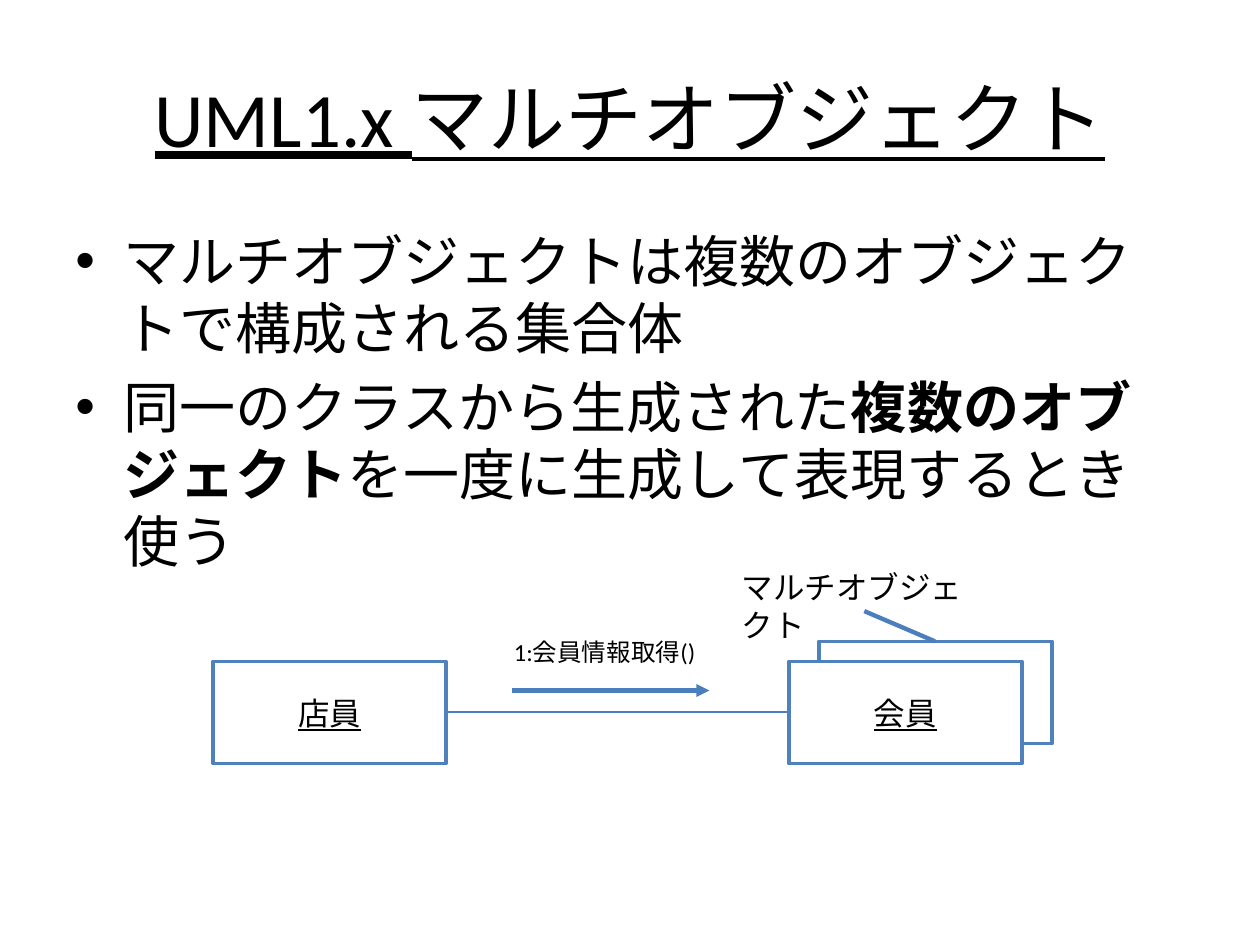
from dataclasses import dataclass

from lxml import etree
from pptx import Presentation
from pptx.dml.color import RGBColor as RGB
from pptx.enum.lang import MSO_LANGUAGE_ID as LANG
from pptx.enum.shapes import MSO_CONNECTOR as CONN, MSO_SHAPE as SHAPE
from pptx.enum.text import MSO_ANCHOR as ANCHOR, PP_ALIGN as ALIGN
from pptx.oxml.ns import qn
from pptx.util import Inches, Pt


@dataclass(frozen=True)
class Theme:
    font: str = "Calibri"
    ink: RGB = RGB(0, 0, 0)
    paper: RGB = RGB(255, 255, 255)
    edge: RGB = RGB(0x4F, 0x81, 0xBD)
    link: RGB = RGB(0x4B, 0x7E, 0xBC)
    title: int = 44
    body: int = 32
    label: int = 18
    note: int = 14


def put(item, **values):
    for name, value in values.items():
        setattr(item, name, value)


class Painter:
    def __init__(self, slide, theme):
        self.shapes = slide.shapes
        self.theme = theme

    def add_run(self, para, text, size, **form):
        run = para.add_run()
        run.text = text
        put(run.font, name=self.theme.font, size=Pt(size),
            language_id=LANG.JAPANESE, **form)
        run.font.color.rgb = self.theme.ink

    def text(self, area, text, size, align=ALIGN.LEFT, anchor=ANCHOR.TOP, **form):
        frame = self.shapes.add_textbox(*map(Inches, area)).text_frame
        put(frame, word_wrap=True, vertical_anchor=anchor)
        para = frame.paragraphs[0]
        para.alignment = align
        self.add_run(para, text, size, **form)

    def bullets(self, area, items):
        """Each item is a list of (text, bold) pairs."""
        size = self.theme.body
        frame = self.shapes.add_textbox(*map(Inches, area)).text_frame
        frame.word_wrap = True
        for i, item in enumerate(items):
            para = frame.add_paragraph() if i else frame.paragraphs[0]
            para.space_before = Pt(size * 0.2)
            props = para._p.get_or_add_pPr()
            props.set("marL", str(Inches(0.38)))
            props.set("indent", str(Inches(-0.38)))
            etree.SubElement(props, qn("a:buFont")).set("typeface", "Arial")
            etree.SubElement(props, qn("a:buChar")).set("char", "•")
            for text, bold in item:
                self.add_run(para, text, size, bold=bold)

    def box(self, area, text=""):
        shape = self.shapes.add_shape(SHAPE.RECTANGLE, *map(Inches, area))
        shape.shadow.inherit = False
        shape.fill.solid()
        shape.fill.fore_color.rgb = self.theme.paper
        shape.line.color.rgb = self.theme.edge
        shape.line.width = Pt(2)
        if text:
            frame = shape.text_frame
            frame.vertical_anchor = ANCHOR.MIDDLE
            para = frame.paragraphs[0]
            para.alignment = ALIGN.CENTER
            self.add_run(para, text, self.theme.label, underline=True)

    def line(self, start, end, width=2.5, arrow=False):
        link = self.shapes.add_connector(CONN.STRAIGHT, *map(Inches, start + end))
        link.line.color.rgb = self.theme.link
        link.line.width = Pt(width)
        props = link._element.spPr
        if arrow:
            tip = etree.SubElement(props.find(qn("a:ln")), qn("a:tailEnd"))
            tip.set("type", "triangle")
        etree.SubElement(props, qn("a:effectLst"))


def main():
    deck = Presentation()
    put(deck, slide_width=Inches(10), slide_height=Inches(7.5))
    theme = Theme()
    art = Painter(deck.slides.add_slide(deck.slide_layouts[6]), theme)

    wide, high, top = 1.85, 0.81, 5.25
    clerk, member, mid = 1.69, 6.26, 5.65

    art.box((member + 0.24, top - 0.16, wide, high))
    art.text((0.5, 0.3, 9, 1.25), "UML1.x マルチオブジェクト", theme.title,
             ALIGN.CENTER, ANCHOR.MIDDLE, underline=True)
    art.bullets((0.5, 1.75, 9, 2.39), [
        [("マルチオブジェクトは複数のオブジェクトで構成される集合体", False)],
        [("同一のクラスから生成された", False),
         ("複数のオブジェクト", True),
         ("を一度に生成して表現するとき使う", False)],
    ])

    art.box((clerk, top, wide, high), "店員")
    art.line((clerk + wide, mid), (member, mid), width=0.75)
    art.box((member, top, wide, high), "会員")

    art.text((3.98, 5.01, 2.42, 0.34), "1:会員情報取得()", theme.note)
    art.line((4.06, 5.48), (5.63, 5.48), arrow=True)
    art.text((5.79, 4.46, 2.15, 0.4), "マルチオブジェクト", theme.label)
    art.line((6.86, 4.85), (7.42, 5.09))

    deck.save("out.pptx")


if __name__ == "__main__":
    main()
